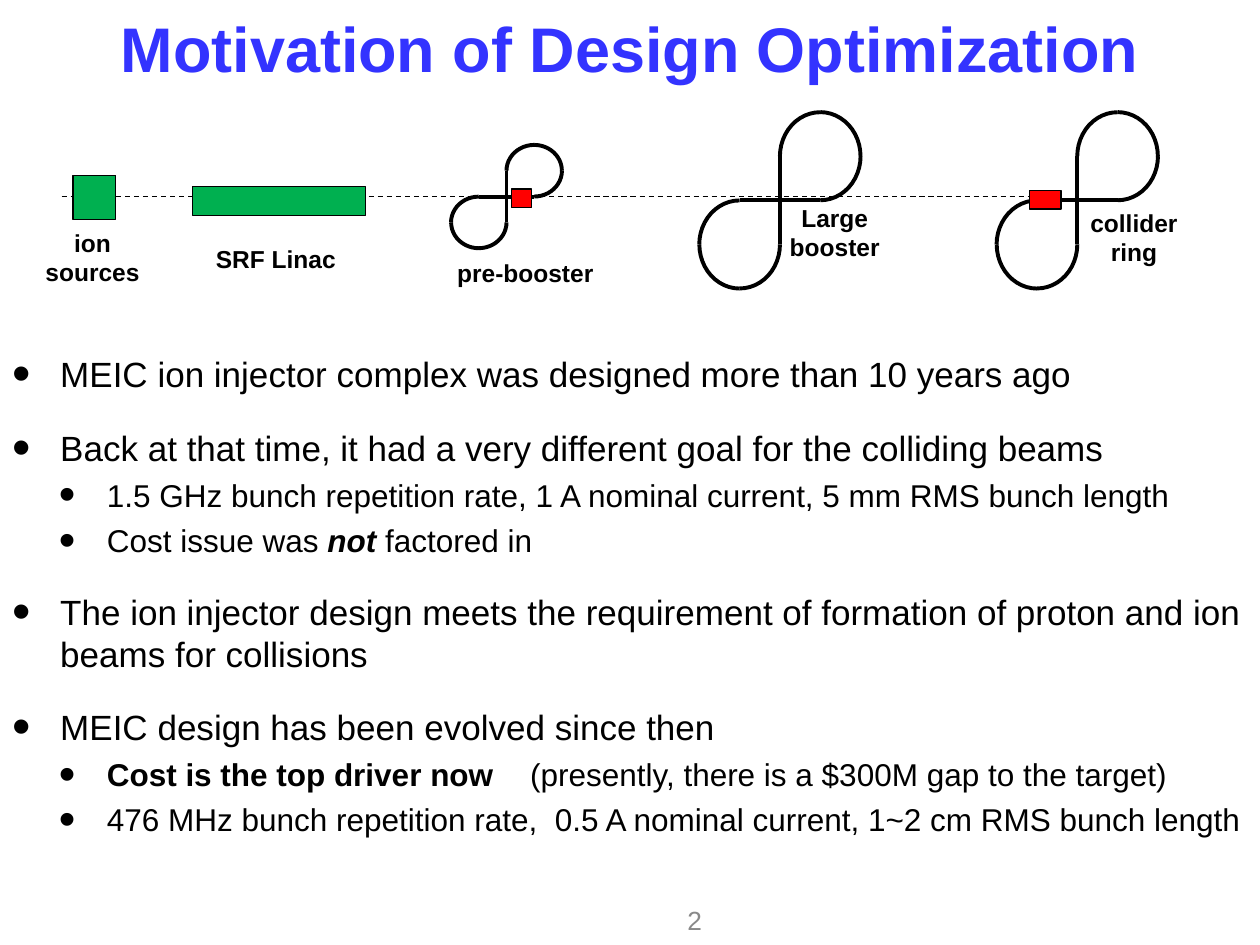
import pptx
import pptx.dml.color
import pptx.enum.dml
import pptx.enum.shapes
import pptx.enum.text
import pptx.oxml.ns
import pptx.util
from lxml import etree

Inches = pptx.util.Inches
Pt = pptx.util.Pt
RGBColor = pptx.dml.color.RGBColor
SHAPES = pptx.enum.shapes.MSO_SHAPE
ALIGN = pptx.enum.text.PP_ALIGN
ANCHOR = pptx.enum.text.MSO_ANCHOR
qn = pptx.oxml.ns.qn

BLACK = RGBColor(0x00, 0x00, 0x00)
BLUE = RGBColor(0x33, 0x33, 0xFF)
GREEN = RGBColor(0x00, 0xB0, 0x50)
RED = RGBColor(0xFF, 0x00, 0x00)
GRAY = RGBColor(0x89, 0x89, 0x89)

TITLE = {"size": Pt(36), "bold": True, "color": BLUE}
LABEL = {"size": Pt(14), "bold": True, "color": BLACK}
NUMBER = {"size": Pt(15), "color": GRAY}
LEVEL_FORMATS = [{"size": Pt(20), "color": BLACK}, {"size": Pt(18), "color": BLACK}]
LEVEL_INDENTS = [0.38, 0.75]
LEVEL_SPACES = [Pt(18), Pt(4.2)]
HANGING = 0.38

# Each bullet: level, runs of (text, extra format), tab stops in inches
BULLETS = [
    (0, [("MEIC ion injector complex was designed more than 10 years ago", {})], []),
    (0, [("Back at that time, it had a very different goal for the colliding beams", {})], []),
    (1, [("1.5 GHz bunch repetition rate, 1 A nominal current, 5 mm RMS bunch length", {})], []),
    (1, [("Cost issue was ", {}), ("not", {"bold": True, "italic": True}),
         (" factored in", {})], []),
    (0, [("The ion injector design meets the requirement of formation of proton "
          "and ion beams for collisions", {})], []),
    (0, [("MEIC design has been evolved since then", {})], []),
    (1, [("Cost is the top driver now", {"bold": True}),
         ("\t(presently, there is a $300M gap to the target)", {})], [4.11]),
    (1, [("476 MHz bunch repetition rate,  0.5 A nominal current, "
          "1~2 cm RMS bunch length", {})], []),
]

# Crossing point and loop size of each figure-eight ring
RINGS = [(4.02, 1.56, 0.44, 0.41), (6.19, 1.59, 0.64, 0.7), (8.55, 1.59, 0.64, 0.7)]
BLOCKS = [
    (0.58, 1.39, 0.34, 0.35, GREEN),
    (1.53, 1.48, 1.37, 0.23, GREEN),
    (4.06, 1.5, 0.16, 0.15, RED),
    (8.17, 1.51, 0.25, 0.15, RED),
]
LABELS = [
    ("ion sources", 0.17, 1.76, 1.13, 0.57),
    ("SRF Linac", 1.42, 1.89, 1.54, 0.34),
    ("pre-booster", 3.42, 2, 1.5, 0.34),
    ("Large booster", 6, 1.56, 1.25, 0.57),
    ("collider ring", 8.5, 1.6, 1, 0.57),
]


def set_font(font, values):
    font.name = "Arial"
    for name, value in values.items():
        if name == "color":
            font.color.rgb = value
        else:
            setattr(font, name, value)


def add_box(slide, left, top, width, height, anchor=ANCHOR.TOP):
    shape = slide.shapes.add_textbox(Inches(left), Inches(top), Inches(width), Inches(height))
    shape.text_frame.word_wrap = True
    shape.text_frame.vertical_anchor = anchor
    return shape.text_frame


def add_text(slide, text, box, values, alignment=ALIGN.CENTER, anchor=ANCHOR.TOP):
    paragraph = add_box(slide, *box, anchor).paragraphs[0]
    paragraph.alignment = alignment
    run = paragraph.add_run()
    run.text = text
    set_font(run.font, values)


def add_line(slide, start_x, start_y, end_x, end_y, width, dash=None):
    line = slide.shapes.add_connector(
        pptx.enum.shapes.MSO_CONNECTOR.STRAIGHT,
        Inches(start_x), Inches(start_y), Inches(end_x), Inches(end_y))
    line.line.color.rgb = BLACK
    line.line.width = Pt(width)
    if dash:
        line.line.dash_style = dash
    etree.SubElement(line._element.spPr, qn("a:effectLst"))


def add_outlined(slide, kind, left, top, width, height, line_width, fill=None):
    shape = slide.shapes.add_shape(
        kind, Inches(left), Inches(top), Inches(width), Inches(height))
    shape.shadow.inherit = False
    if fill is None:
        shape.fill.background()
    else:
        shape.fill.solid()
        shape.fill.fore_color.rgb = fill
    shape.line.color.rgb = BLACK
    shape.line.width = Pt(line_width)
    return shape


def add_ring(slide, x, y, width, height):
    """Two three-quarter loops, joined by straight lines through (x, y)."""
    add_line(slide, x, y - height / 2, x, y + height / 2, 2.25)
    add_line(slide, x + width / 2, y, x - width / 2, y, 2.25)
    for side, rotations in ((1, (0, 270, 90)), (-1, (180, 90, 270))):
        center_x, center_y = x + side * width / 2, y - side * height / 2
        for rotation in rotations:
            # A quarter turn swaps the sides of the unrotated box
            w, h = (height, width) if rotation % 180 else (width, height)
            arc = add_outlined(slide, SHAPES.ARC, center_x - w / 2, center_y - h / 2, w, h, 2.25)
            arc.rotation = rotation


def add_diagram(slide):
    # Beam axis
    add_line(slide, 0.49, 1.56, 8.42, 1.56, 0.75, pptx.enum.dml.MSO_LINE.DASH)
    for ring in RINGS:
        add_ring(slide, *ring)
    for *box, fill in BLOCKS:
        add_outlined(slide, SHAPES.RECTANGLE, *box, 0.75, fill)
    for text, *box in LABELS:
        add_text(slide, text, box, LABEL)


def set_bullet(paragraph, level, tabs):
    properties = paragraph._p.get_or_add_pPr()
    properties.set("marL", str(Inches(LEVEL_INDENTS[level])))
    properties.set("indent", str(-Inches(HANGING)))
    etree.SubElement(properties, qn("a:buSzPct"), val="150000")
    etree.SubElement(properties, qn("a:buFont"), typeface="Arial")
    etree.SubElement(properties, qn("a:buChar"), char="•")
    if tabs:
        tab_list = etree.SubElement(properties, qn("a:tabLst"))
        for position in tabs:
            etree.SubElement(tab_list, qn("a:tab"), pos=str(Inches(position)), algn="l")


def add_bullets(slide, box):
    frame = add_box(slide, *box)
    for index, (level, runs, tabs) in enumerate(BULLETS):
        paragraph = frame.add_paragraph() if index else frame.paragraphs[0]
        set_bullet(paragraph, level, tabs)
        if index:
            paragraph.space_before = LEVEL_SPACES[level]
        set_font(paragraph.font, LEVEL_FORMATS[level])
        for text, extra in runs:
            run = paragraph.add_run()
            run.text = text
            set_font(run.font, {**LEVEL_FORMATS[level], **extra})


def main():
    presentation = pptx.Presentation()
    presentation.slide_width = Inches(10)
    presentation.slide_height = Inches(7.5)
    slide = presentation.slides.add_slide(presentation.slide_layouts[6])

    add_bullets(slide, (0, 2.75, 10, 4.08))
    add_text(slide, "Motivation of Design Optimization", (0, 0, 10, 0.75), TITLE,
             anchor=ANCHOR.MIDDLE)
    add_text(slide, "2", (4.17, 7.1, 1.5, 0.4), NUMBER, ALIGN.RIGHT, ANCHOR.MIDDLE)
    add_diagram(slide)
    presentation.save("out.pptx")


if __name__ == "__main__":
    main()
